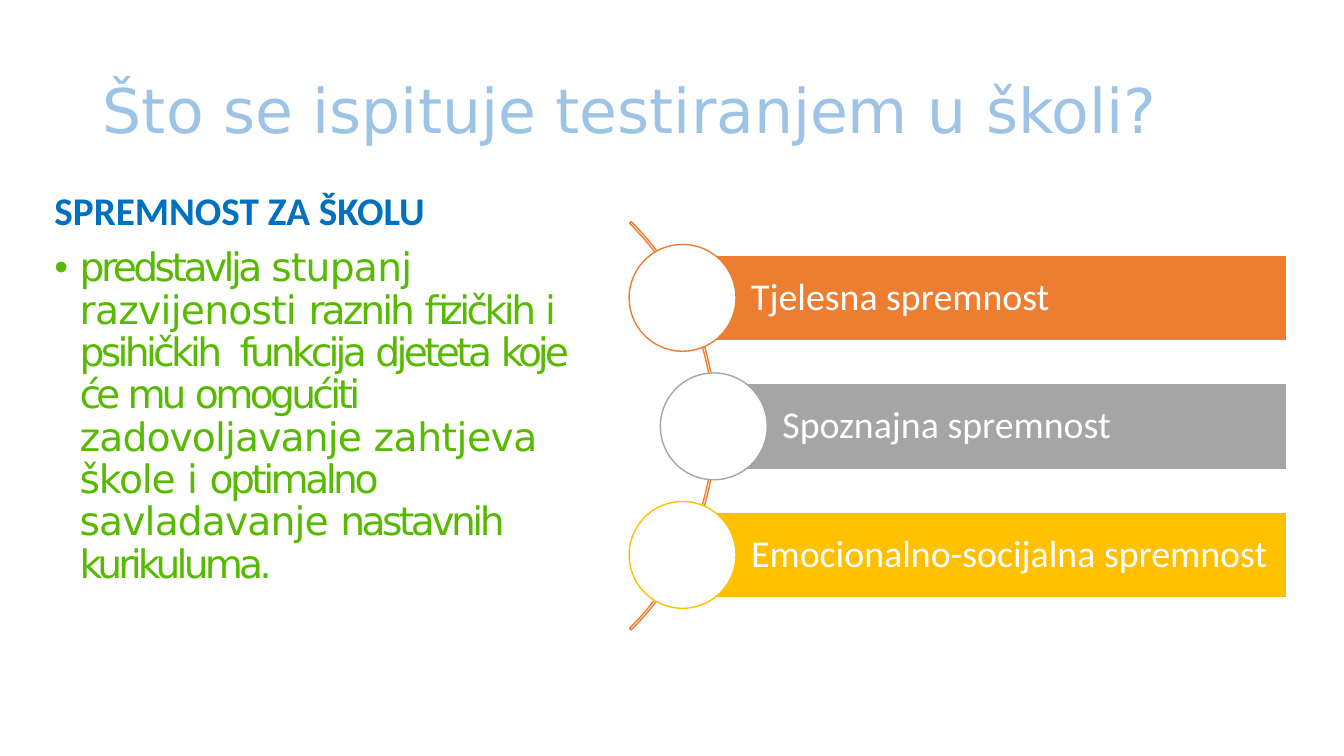
from pptx import Presentation
from pptx.dml.color import RGBColor
from pptx.enum.shapes import MSO_SHAPE as Shape
from pptx.enum.text import MSO_ANCHOR as Anchor, MSO_AUTO_SIZE as AutoSize, PP_ALIGN as Align
from pptx.oxml.ns import qn
from pptx.util import Inches, Pt
from lxml.etree import SubElement

HEADING_FONT = "DejaVu Sans"
LABEL_FONT = "Calibri"
ORANGE, GREY, YELLOW, WHITE = "ED7D31", "A5A5A5", "FFC000", "FFFFFF"
BLUE, GREEN, PALE_BLUE = "0070C0", "58BA00", "9DC3E6"

DEFINITION = [
    ("predstavlja ", -2.5), ("stupanj razvijenosti ", -0.5), ("raznih ", -2.1),
    ("fizičkih ", -2.5), ("i ", -2.2), ("psihičkih  ", -2.6),
    ("funkcija ", -2.7), ("djeteta ", -2.6), ("koje ", -2.9), ("će ", -3.6),
    ("mu ", -2.9), ("omogućiti ", -2.6), ("zadovoljavanje ", -0.6),
    ("zahtjeva  ", -0.3), ("škole ", -0.8), ("i ", -0.6),
    ("optimalno ", -2.5), ("savladavanje ", -0.6), ("nastavnih ", -2.5),
    ("kurikuluma.", -2.7),
]
READINESS = [
    ("Tjelesna spremnost", ORANGE, 6.77),
    ("Spoznajna spremnost", GREY, 7.08),
    ("Emocionalno-socijalna spremnost", YELLOW, 6.77),
]
BAR_RIGHT, BAR_HEIGHT, BAR_PITCH, FIRST_BAR_TOP = 12.76, 0.85, 1.275, 2.53
CIRCLE_SIZE = 1.06


def color(value):
    return RGBColor.from_string(value)


def place(shape, left, top, width, height):
    shape.left, shape.top = Inches(left), Inches(top)
    shape.width, shape.height = Inches(width), Inches(height)


def add_run(paragraph, text, font, size, text_color, bold=False, spacing=None):
    run = paragraph.add_run()
    run.text = text
    run.font.name = font
    run.font.size = Pt(size)
    run.font.bold = bold
    run.font.color.rgb = color(text_color)
    if spacing is not None:
        run.font._element.set("spc", str(round(spacing * 100)))


def format_paragraph(paragraph, space_before=0):
    paragraph.alignment = Align.LEFT
    paragraph.line_spacing = 0.9
    paragraph.space_before = Pt(space_before)


def set_bullet(paragraph, indent, character=None):
    properties = paragraph._p.get_or_add_pPr()
    properties.set("marL", str(Inches(indent)))
    properties.set("indent", str(-Inches(indent)))
    if character:
        SubElement(properties, qn("a:buFont")).set("typeface", "Arial")
        SubElement(properties, qn("a:buChar")).set("char", character)
    else:
        SubElement(properties, qn("a:buNone"))


def add_figure(slide, kind, box, fill, line):
    shape = slide.shapes.add_shape(kind, *map(Inches, box))
    shape.shadow.inherit = False
    if fill:
        shape.fill.solid()
        shape.fill.fore_color.rgb = color(fill)
    else:
        shape.fill.background()
    shape.line.color.rgb = color(line)
    shape.line.width = Pt(1)
    return shape


def fill_title(title):
    place(title, 0.92, 0.4, 11.5, 1.45)
    frame = title.text_frame
    frame.auto_size = AutoSize.NONE
    frame.vertical_anchor = Anchor.MIDDLE
    format_paragraph(frame.paragraphs[0])
    add_run(frame.paragraphs[0], "Što se ispituje testiranjem u školi?",
            HEADING_FONT, 44, PALE_BLUE)


def fill_body(body):
    place(body, 0.44, 1.85, 5.58, 4.76)
    frame = body.text_frame
    frame.auto_size = AutoSize.NONE
    heading = frame.paragraphs[0]
    format_paragraph(heading, 10)
    set_bullet(heading, 0)
    add_run(heading, "SPREMNOST ZA ŠKOLU", LABEL_FONT, 28, BLUE, bold=True)
    definition = frame.add_paragraph()
    format_paragraph(definition, 10)
    set_bullet(definition, 0.25, "•")
    for text, spacing in DEFINITION:
        add_run(definition, text, HEADING_FONT, 28, GREEN, spacing=spacing)


def add_arc(slide):
    arc = add_figure(slide, Shape.BLOCK_ARC, (1.37, 1.36, 5.73, 5.73), None, ORANGE)
    for index, value in enumerate((189, 27, 0.004)):
        arc.adjustments[index] = value


def add_readiness(slide, label, accent, left, top):
    bar = add_figure(slide, Shape.RECTANGLE,
                     (left, top, BAR_RIGHT - left, BAR_HEIGHT), accent, WHITE)
    frame = bar.text_frame
    frame.word_wrap = True
    frame.vertical_anchor = Anchor.MIDDLE
    frame.margin_left = Inches(0.68)
    frame.margin_top = frame.margin_right = frame.margin_bottom = Inches(0.07)
    format_paragraph(frame.paragraphs[0])
    add_run(frame.paragraphs[0], label, LABEL_FONT, 27, WHITE)
    circle_top = top + (BAR_HEIGHT - CIRCLE_SIZE) / 2
    add_figure(slide, Shape.OVAL,
               (left - CIRCLE_SIZE / 2, circle_top, CIRCLE_SIZE, CIRCLE_SIZE),
               WHITE, accent)


def main():
    presentation = Presentation()
    presentation.slide_width = Inches(13.33)
    presentation.slide_height = Inches(7.5)
    slide = presentation.slides.add_slide(presentation.slide_layouts[1])
    fill_title(slide.shapes.title)
    fill_body(slide.placeholders[1])
    add_arc(slide)
    for index, (label, accent, left) in enumerate(READINESS):
        add_readiness(slide, label, accent, left, FIRST_BAR_TOP + index * BAR_PITCH)
    presentation.save("out.pptx")


if __name__ == "__main__":
    main()
